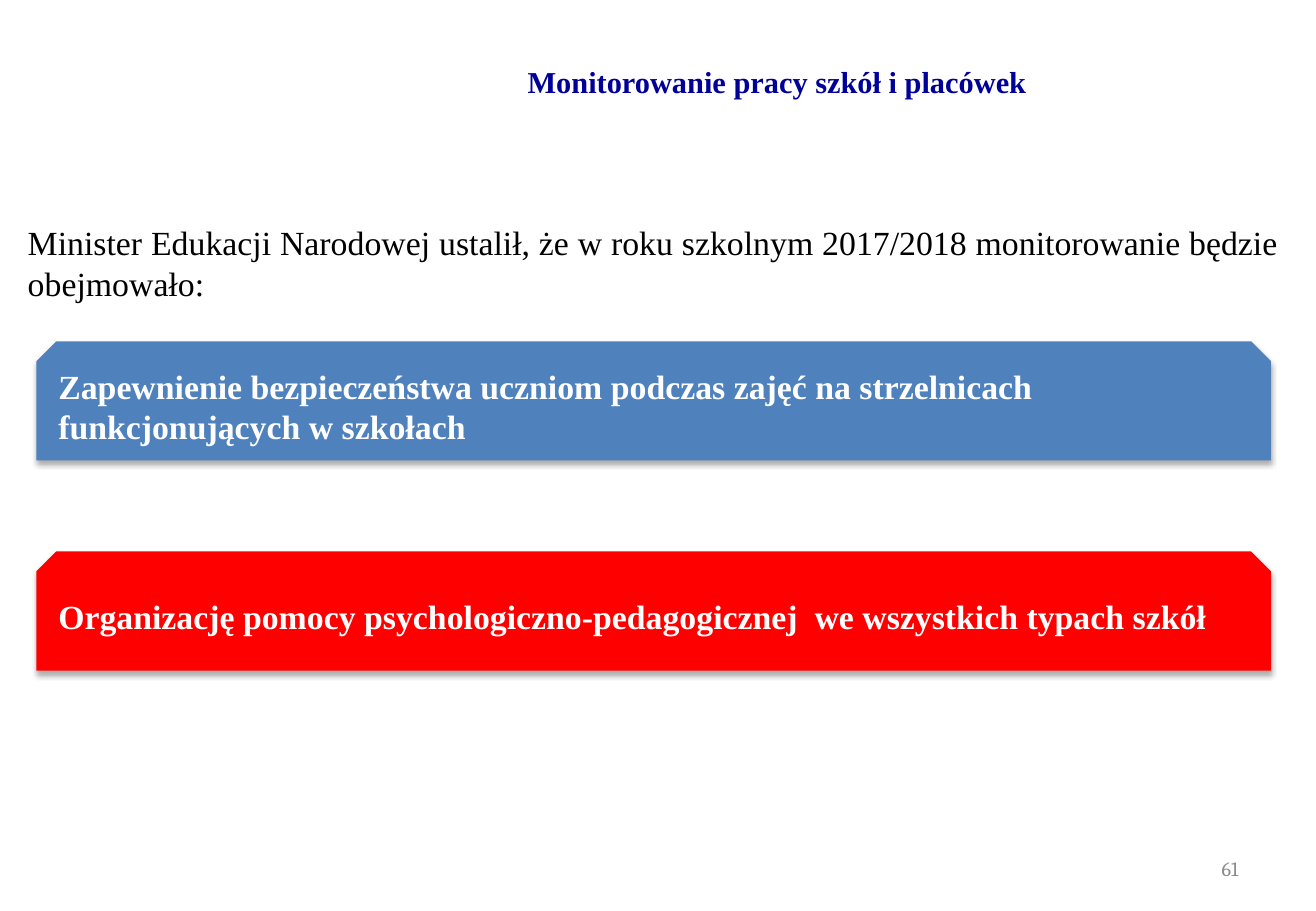
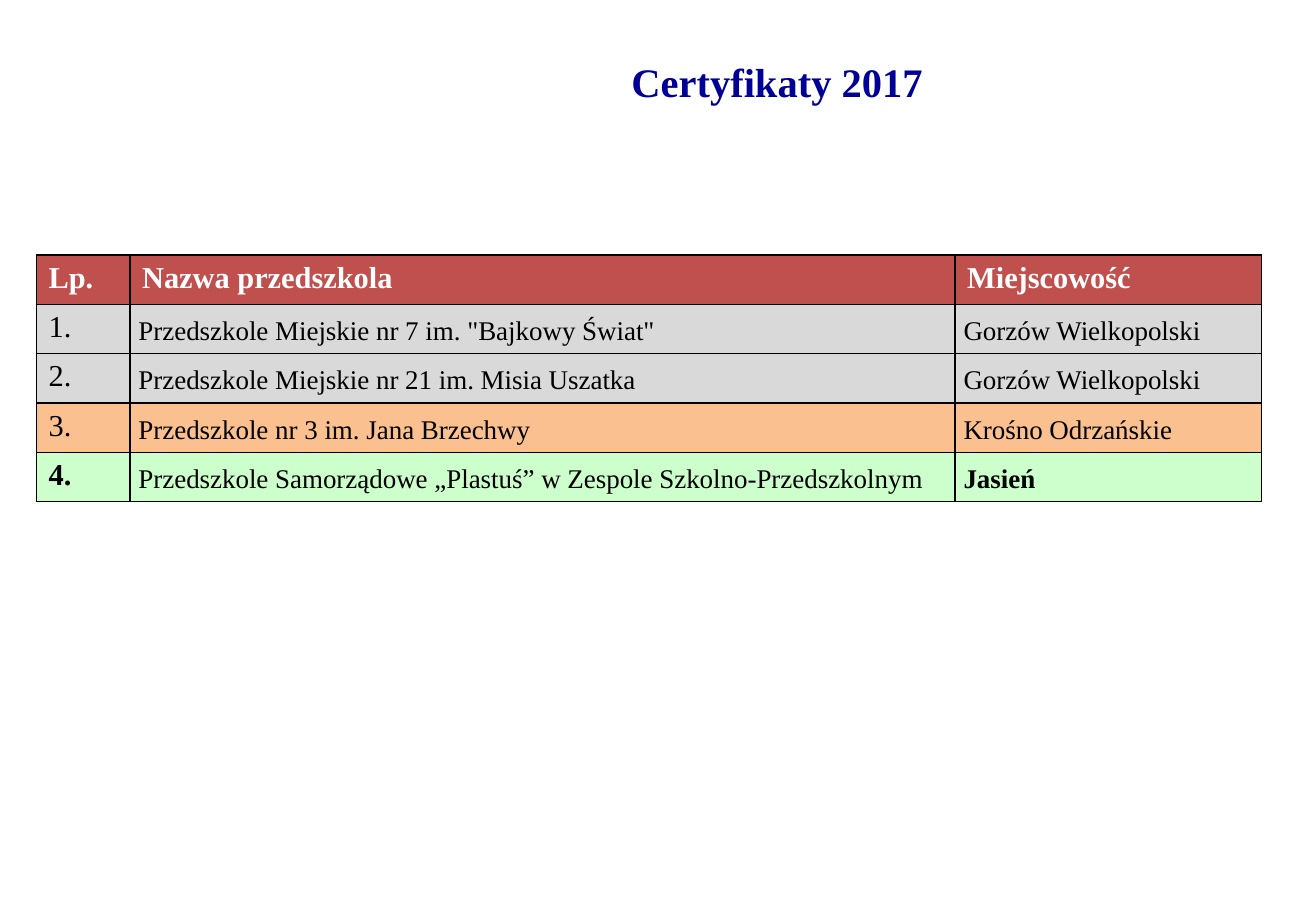
import pptx
import pptx.dml.color
import pptx.enum.shapes
import pptx.enum.text
import pptx.oxml
import pptx.oxml.ns
import pptx.util

RGBColor = pptx.dml.color.RGBColor
ALIGN = pptx.enum.text.PP_ALIGN
ANCHOR = pptx.enum.text.MSO_ANCHOR

WHITE = RGBColor(0xFF, 0xFF, 0xFF)
BLACK = RGBColor(0x00, 0x00, 0x00)
NAVY = RGBColor(0x00, 0x00, 0x99)
GRAY = RGBColor(0x8C, 0x8C, 0x8C)
BLUE = RGBColor(0x4F, 0x81, 0xBD)
RED = RGBColor(0xFF, 0x00, 0x00)
BRICK = RGBColor(0xC0, 0x50, 0x4D)
SILVER = RGBColor(0xD9, 0xD9, 0xD9)
ORANGE = RGBColor(0xFA, 0xC0, 0x90)
MINT = RGBColor(0xCC, 0xFF, 0xCC)

SERIF = "Times New Roman"
EMU_PER_PX = 9144  # 100 px to the inch

SLIDE_SIZE = (1083, 750)
TITLE_BOX = (212, 16, 855, 102)
INTRO_BOX = (13, 178, 1049, 100)
NUMBER_BOX = (776, 695, 253, 40)
BANNER_LEFT, BANNER_TOP, BANNER_WIDTH, BANNER_HEIGHT = 30, 281, 1016, 98
BANNER_STEP = 173
TABLE_LEFT, TABLE_TOP, TABLE_HEIGHT = 30, 210, 203
COLUMN_WIDTHS = (77, 679, 252)

MONITORING_TITLE = "Monitorowanie pracy szkół i placówek"
INTRO = ("Minister Edukacji Narodowej ustalił, że w roku szkolnym 2017/2018 "
         "monitorowanie będzie obejmowało:")
PAGE_NUMBER = "61"
BANNERS = [
    ("Zapewnienie bezpieczeństwa uczniom podczas zajęć na strzelnicach "
     "funkcjonujących w szkołach", BLUE),
    ("Organizację pomocy psychologiczno-pedagogicznej  we wszystkich typach szkół", RED),
]

CERTIFICATES_TITLE = "Certyfikaty 2017"
HEADER = ("Lp.", "Nazwa przedszkola", "Miejscowość")
# name, town, row colour, whether number and town are bold
KINDERGARTENS = [
    ('Przedszkole Miejskie nr 7 im. "Bajkowy Świat"', "Gorzów Wielkopolski", SILVER, False),
    ("Przedszkole Miejskie nr 21 im. Misia Uszatka", "Gorzów Wielkopolski", SILVER, False),
    ("Przedszkole nr 3 im. Jana Brzechwy", "Krośno Odrzańskie", ORANGE, False),
    ("Przedszkole Samorządowe „Plastuś” w Zespole Szkolno-Przedszkolnym", "Jasień", MINT, True),
]


def px(length):
    return pptx.util.Emu(round(length * EMU_PER_PX))


def set_attributes(target, values):
    for name, value in values.items():
        setattr(target, name, value)


def write(text_frame, text, size, color, bold=False, font=SERIF, **paragraph_format):
    paragraph = text_frame.paragraphs[0]
    paragraph.text = text
    set_attributes(paragraph, paragraph_format)
    set_attributes(paragraph.font, {"size": pptx.util.Pt(size), "bold": bold, "name": font})
    paragraph.font.color.rgb = color


def add_text(slide, box, anchor, text, size, color, **text_format):
    frame = slide.shapes.add_textbox(*map(px, box)).text_frame
    set_attributes(frame, {"word_wrap": True, "vertical_anchor": anchor})
    write(frame, text, size, color, **text_format)


def add_titled_slide(presentation, text, size):
    slide = presentation.slides.add_slide(presentation.slide_layouts[5])
    title = slide.shapes.title
    set_attributes(title, dict(zip(("left", "top", "width", "height"), map(px, TITLE_BOX))))
    title.text_frame.vertical_anchor = ANCHOR.MIDDLE
    write(title.text_frame, text, size, NAVY, bold=True, alignment=ALIGN.CENTER)
    return slide


def add_soft_shadow(shape):
    shape.shadow.inherit = False
    effects = shape._element.spPr.find(pptx.oxml.ns.qn("a:effectLst"))
    effects.append(pptx.oxml.parse_xml(
        f'<a:outerShdw {pptx.oxml.ns.nsdecls("a")} blurRad="{pptx.util.Pt(3.5)}" '
        f'dist="{pptx.util.Pt(2.2)}" dir="5400000" rotWithShape="0">'
        '<a:srgbClr val="000000"><a:alpha val="32000"/></a:srgbClr></a:outerShdw>'))


def add_banner(slide, top, text, color):
    banner = slide.shapes.add_shape(
        pptx.enum.shapes.MSO_SHAPE.SNIP_2_SAME_RECTANGLE,
        px(BANNER_LEFT), px(top), px(BANNER_WIDTH), px(BANNER_HEIGHT))
    banner.fill.solid()
    banner.fill.fore_color.rgb = color
    banner.line.fill.background()
    add_soft_shadow(banner)
    set_attributes(banner.text_frame, {"word_wrap": True, "vertical_anchor": ANCHOR.MIDDLE})
    write(banner.text_frame, text, 20, WHITE, bold=True, alignment=ALIGN.LEFT)


def format_cell(cell, color):
    """Draw a black border on all four sides, then fill the cell."""
    properties = cell._tc.get_or_add_tcPr()
    for side in ("lnL", "lnR", "lnT", "lnB"):
        properties.append(pptx.oxml.parse_xml(
            f'<a:{side} {pptx.oxml.ns.nsdecls("a")} w="{pptx.util.Pt(1)}">'
            f'<a:solidFill><a:srgbClr val="{BLACK}"/></a:solidFill></a:{side}>'))
    cell.fill.solid()
    cell.fill.fore_color.rgb = color


def add_certificate_table(slide):
    row_count = len(KINDERGARTENS) + 1
    table = slide.shapes.add_table(
        row_count, len(HEADER), px(TABLE_LEFT), px(TABLE_TOP),
        px(sum(COLUMN_WIDTHS)), px(TABLE_HEIGHT)).table
    table.horz_banding = False
    for column, width in zip(table.columns, COLUMN_WIDTHS):
        column.width = px(width)
    for row in table.rows:
        row.height = px(TABLE_HEIGHT / row_count)

    for column, text in enumerate(HEADER):
        cell = table.cell(0, column)
        format_cell(cell, BRICK)
        write(cell.text_frame, text, 18, WHITE, bold=True)

    detail_format = {"margin_left": px(7), "margin_right": px(7), "margin_top": 0,
                     "margin_bottom": 0, "vertical_anchor": ANCHOR.MIDDLE}
    for number, (name, town, color, bold) in enumerate(KINDERGARTENS, start=1):
        number_cell, *detail_cells = table.rows[number].cells
        format_cell(number_cell, color)
        write(number_cell.text_frame, f"{number}.", 18, BLACK, bold=bold)
        for cell, text, is_bold in zip(detail_cells, (name, town), (False, bold)):
            format_cell(cell, color)
            set_attributes(cell, detail_format)
            write(cell.text_frame, text, 16, BLACK, bold=is_bold, line_spacing=1.15)


def build_monitoring_slide(presentation):
    slide = add_titled_slide(presentation, MONITORING_TITLE, 18)
    add_text(slide, INTRO_BOX, ANCHOR.TOP, INTRO, 20, BLACK, alignment=ALIGN.JUSTIFY)
    add_text(slide, NUMBER_BOX, ANCHOR.MIDDLE, PAGE_NUMBER, 12, GRAY,
             font="Cambria", alignment=ALIGN.RIGHT)
    for index, (text, color) in enumerate(BANNERS):
        add_banner(slide, BANNER_TOP + index * BANNER_STEP, text, color)


def build_certificates_slide(presentation):
    add_certificate_table(add_titled_slide(presentation, CERTIFICATES_TITLE, 24))


def main():
    presentation = pptx.Presentation()
    presentation.slide_width, presentation.slide_height = map(px, SLIDE_SIZE)
    build_monitoring_slide(presentation)
    build_certificates_slide(presentation)
    presentation.save("out.pptx")


if __name__ == "__main__":
    main()
